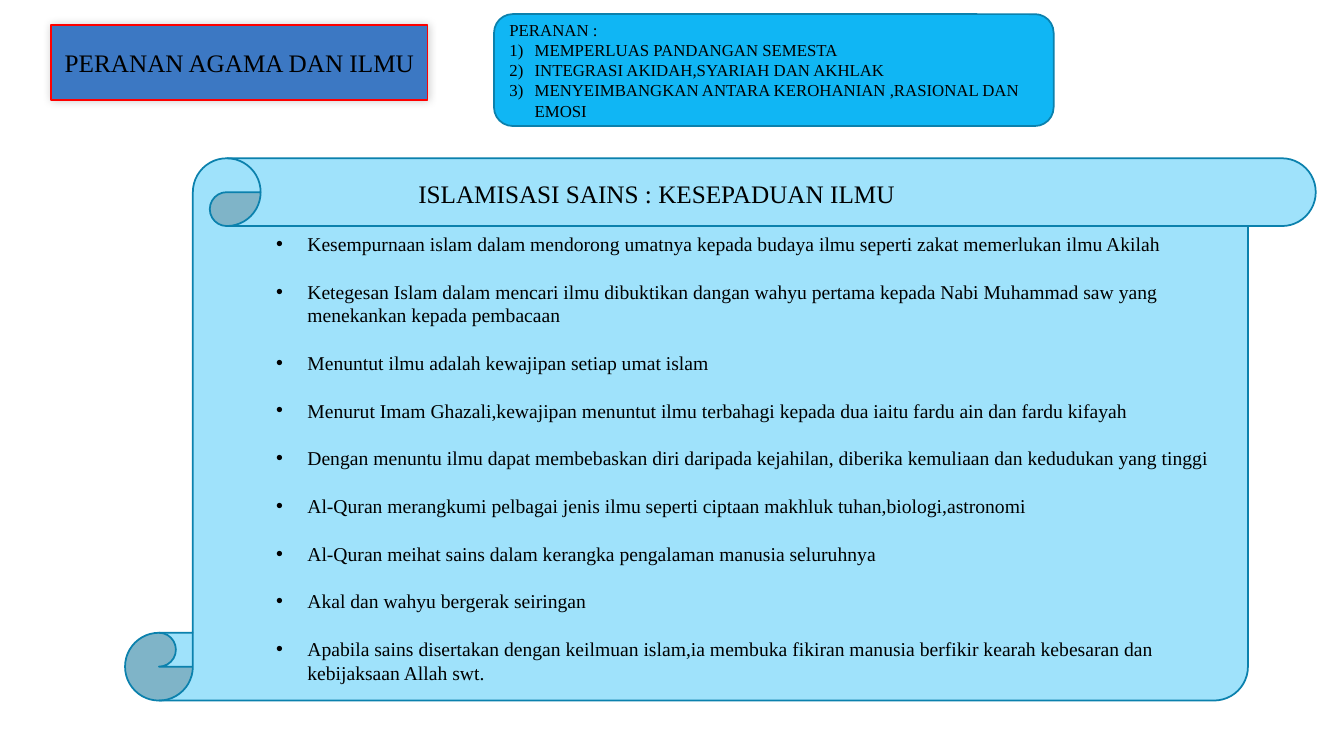
import pptx
import pptx.dml.color
import pptx.enum.shapes
import pptx.enum.text
import pptx.oxml.ns
import pptx.util
from lxml import etree

RGBColor = pptx.dml.color.RGBColor
SHAPE = pptx.enum.shapes.MSO_SHAPE
ALIGN = pptx.enum.text.PP_ALIGN
ANCHOR = pptx.enum.text.MSO_ANCHOR

BLACK = RGBColor(0x00, 0x00, 0x00)
RED = RGBColor(0xFF, 0x00, 0x00)
BLUE = RGBColor(0x3C, 0x78, 0xC3)
SKY = RGBColor(0x10, 0xB6, 0xF4)
PALE_SKY = RGBColor(0x9F, 0xE2, 0xFB)
TEAL = RGBColor(0x0B, 0x81, 0xAD)

EMU_PER_PX = 9144  # 100 px to the inch

ROLES = [
    "MEMPERLUAS PANDANGAN SEMESTA",
    "INTEGRASI AKIDAH,SYARIAH DAN AKHLAK",
    "MENYEIMBANGKAN ANTARA KEROHANIAN ,RASIONAL DAN EMOSI",
]
POINTS = [
    "Kesempurnaan islam dalam mendorong umatnya kepada budaya ilmu seperti zakat memerlukan ilmu Akilah",
    "Ketegesan Islam dalam mencari ilmu dibuktikan dangan wahyu pertama kepada Nabi Muhammad saw yang menekankan kepada pembacaan",
    "Menuntut ilmu adalah kewajipan setiap umat islam",
    "Menurut Imam Ghazali,kewajipan menuntut ilmu terbahagi kepada dua iaitu fardu ain dan fardu kifayah",
    "Dengan menuntu ilmu dapat membebaskan diri daripada kejahilan, diberika kemuliaan dan kedudukan yang tinggi",
    "Al-Quran merangkumi pelbagai jenis ilmu seperti ciptaan makhluk tuhan,biologi,astronomi",
    "Al-Quran meihat sains dalam kerangka pengalaman manusia seluruhnya",
    "Akal dan wahyu bergerak seiringan",
    "Apabila sains disertakan dengan keilmuan islam,ia membuka fikiran manusia berfikir kearah kebesaran dan kebijaksaan Allah swt.",
]


def px(length):
    return pptx.util.Emu(length * EMU_PER_PX)


def add_xml(parent, tag, **attributes):
    return etree.SubElement(parent, pptx.oxml.ns.qn(tag), **attributes)


class SlideBuilder:
    font_name = "Times New Roman"
    line_width = pptx.util.Pt(1.25)

    def __init__(self, slide):
        self.slide = slide

    def shape(self, kind, box, fill, line):
        shape = self.slide.shapes.add_shape(kind, *map(px, box))
        shape.shadow.inherit = False
        shape.fill.solid()
        shape.fill.fore_color.rgb = fill
        shape.line.color.rgb = line
        shape.line.width = self.line_width
        return shape

    def textbox(self, box):
        return self.slide.shapes.add_textbox(*map(px, box))

    def glow(self, shape):
        """Give the shape a soft, faint black shadow with no offset."""
        effects = shape._element.spPr.find(pptx.oxml.ns.qn("a:effectLst"))
        shadow = add_xml(effects, "a:outerShdw", blurRad=str(pptx.util.Pt(6)),
                         dist="0", dir="18900000", rotWithShape="0")
        colour = add_xml(shadow, "a:srgbClr", val=str(BLACK))
        add_xml(colour, "a:alpha", val="20000")

    def fill_text(self, shape, lines, size, anchor=ANCHOR.TOP, **paragraph_format):
        """Fill the shape with one paragraph a line and return the paragraphs."""
        frame = shape.text_frame
        frame.word_wrap = True
        frame.vertical_anchor = anchor
        frame.text = "\n".join(lines)
        paragraph_values = {"alignment": ALIGN.LEFT, **paragraph_format}
        font_values = {"name": self.font_name, "size": pptx.util.Pt(size)}
        for paragraph in frame.paragraphs:
            for name, value in paragraph_values.items():
                setattr(paragraph, name, value)
            font = paragraph.runs[0].font
            for name, value in font_values.items():
                setattr(font, name, value)
            font.color.rgb = BLACK
        return frame.paragraphs

    def list_marks(self, paragraphs, indent, numbered=False):
        """Hang each paragraph behind a number or a round bullet."""
        for paragraph in paragraphs:
            properties = paragraph._p.get_or_add_pPr()
            properties.set("marL", str(px(indent)))
            properties.set("indent", str(px(-indent)))
            if numbered:
                add_xml(properties, "a:buFont", typeface="+mj-lt")
                add_xml(properties, "a:buAutoNum", type="arabicParenR")
            else:
                add_xml(properties, "a:buFont", typeface="Arial")
                add_xml(properties, "a:buChar", char="•")


def main():
    deck = pptx.Presentation()
    deck.slide_width, deck.slide_height = px(1333), px(750)
    builder = SlideBuilder(deck.slides.add_slide(deck.slide_layouts[6]))

    title = builder.shape(SHAPE.RECTANGLE, (51, 25, 373, 74), BLUE, RED)
    builder.glow(title)
    builder.fill_text(title, ["PERANAN AGAMA DAN ILMU"], 18, ANCHOR.MIDDLE,
                      alignment=ALIGN.CENTER)

    roles = builder.shape(SHAPE.FLOWCHART_ALTERNATE_PROCESS,
                          (490, 14, 555, 111), SKY, TEAL)
    role_lines = builder.fill_text(roles, ["PERANAN :", *ROLES], 12, ANCHOR.MIDDLE)
    builder.list_marks(role_lines[1:], 25, numbered=True)

    builder.shape(SHAPE.VERTICAL_SCROLL, (124, 157, 1181, 538), PALE_SKY, TEAL)
    heading = builder.textbox((405, 172, 532, 40))
    builder.fill_text(heading, ["ISLAMISASI SAINS : KESEPADUAN ILMU"], 18)

    points = builder.textbox((264, 225, 949, 458))
    point_lines = builder.fill_text(points, POINTS, 14,
                                    space_after=pptx.util.Pt(17.25))
    builder.list_marks(point_lines, 31)

    deck.save("out.pptx")


if __name__ == "__main__":
    main()
